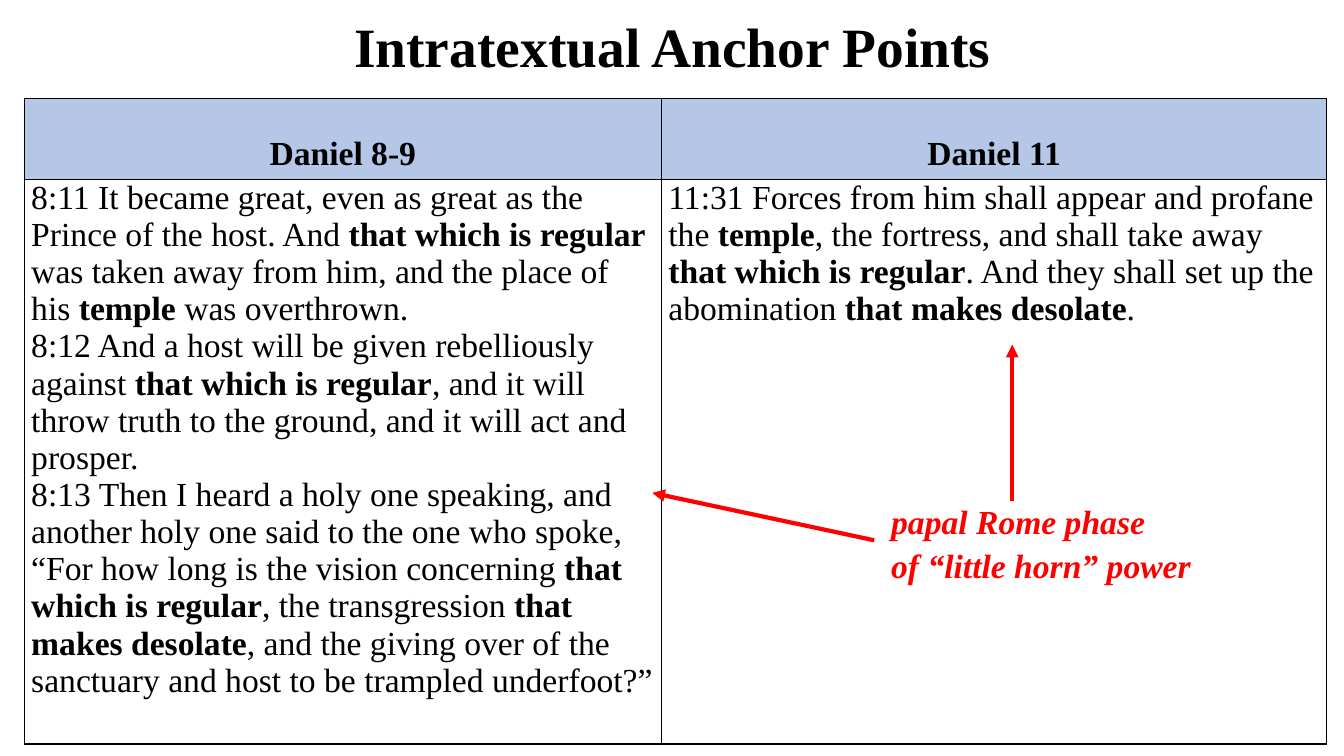
from dataclasses import dataclass

from lxml import etree
from pptx import Presentation
from pptx import util as u
from pptx.dml.color import RGBColor
from pptx.enum import shapes, text
from pptx.oxml import ns


@dataclass(frozen=True)
class Theme:
    """Colours, font and type sizes of the slide."""
    font: str = "Times New Roman"
    ink: str = "000000"
    accent: str = "FF0000"
    header: str = "B4C7E7"
    title_size: float = 39.6
    body_size: float = 24
    border: float = 1
    arrow: float = 3


THEME = Theme()
HEADINGS = ["Daniel 8-9", "Daniel 11"]
BOLD_MARK = "*"
VERSES = [
    [
        "8:11 It became great, even as great as the Prince of the host. And *that which is regular *"
        "was taken away from him, and the place of his *temple* was overthrown.",
        "8:12 And a host will be given rebelliously against *that which is regular*, and it will "
        "throw truth to the ground, and it will act and prosper.",
        "8:13 Then I heard a holy one speaking, and another holy one said to the one who spoke, "
        "“For how long is the vision concerning *that which is regular*, the transgression "
        "*that makes desolate*, and the giving over of the sanctuary and host to be trampled "
        "underfoot?”",
    ],
    [
        "11:31 Forces from him shall appear and profane the *temple*, the fortress, and shall take "
        "away *that which is regular*. And they shall set up the abomination *that makes desolate*.",
    ],
]


def style(paragraph, size, colour, bold=None, italic=None):
    """Set the font of a paragraph."""
    font = paragraph.font
    font.name, font.size = THEME.font, u.Pt(size)
    font.bold, font.italic = bold, italic
    font.color.rgb = RGBColor.from_string(colour)


def write_paragraphs(frame, lines, **font):
    """Write one styled paragraph per line, with marked phrases in bold."""
    for index, line in enumerate(lines):
        paragraph = frame.add_paragraph() if index else frame.paragraphs[0]
        style(paragraph, **font)
        for position, phrase in enumerate(line.split(BOLD_MARK)):
            if phrase:
                run = paragraph.add_run()
                run.text = phrase
                if position % 2:
                    run.font.bold = True


def add_text(slide, box, lines, **font):
    """Add a wrapping text box and return its frame."""
    frame = slide.shapes.add_textbox(*map(u.Inches, box)).text_frame
    frame.word_wrap = True
    write_paragraphs(frame, lines, **font)
    return frame


def add_title(slide, box):
    """Add the centred slide title."""
    frame = add_text(slide, box, ["Intratextual Anchor Points"],
                     size=THEME.title_size, colour=THEME.ink, bold=True)
    frame.vertical_anchor = text.MSO_ANCHOR.MIDDLE
    frame.paragraphs[0].alignment = text.PP_ALIGN.CENTER
    frame.paragraphs[0].line_spacing = 0.9


def set_borders(cell):
    """Draw a thin line on all four sides of a cell."""
    properties = cell._tc.get_or_add_tcPr()
    for index, side in enumerate(("lnL", "lnR", "lnT", "lnB")):
        line = etree.Element(ns.qn(f"a:{side}"), w=str(u.Pt(THEME.border)))
        fill = etree.SubElement(line, ns.qn("a:solidFill"))
        etree.SubElement(fill, ns.qn("a:srgbClr"), val=THEME.ink)
        properties.insert(index, line)


def format_cell(cell, fill=None):
    """Set the margins, fill and borders of a cell."""
    cell.margin_left = cell.margin_right = u.Inches(0.07)
    cell.margin_top = cell.margin_bottom = 0
    if fill:
        cell.fill.solid()
        cell.fill.fore_color.rgb = RGBColor.from_string(fill)
    else:
        cell.fill.background()
    set_borders(cell)


def add_verse_table(slide, box, widths, heights):
    """Add the table that sets the two passages side by side."""
    table = slide.shapes.add_table(2, 2, *map(u.Inches, box)).table
    table.horz_banding = table.first_row = False
    for column, width in zip(table.columns, widths):
        column.width = u.Inches(width)
    for row, height in zip(table.rows, heights):
        row.height = u.Inches(height)
    for index, (heading, verses) in enumerate(zip(HEADINGS, VERSES)):
        header, body = table.cell(0, index), table.cell(1, index)
        format_cell(header, THEME.header)
        format_cell(body)
        write_paragraphs(header.text_frame, [heading],
                         size=THEME.body_size, colour=THEME.ink, bold=True)
        header.text_frame.paragraphs[0].alignment = text.PP_ALIGN.CENTER
        header.text_frame.paragraphs[0].line_spacing = 2.0
        write_paragraphs(body.text_frame, verses,
                         size=THEME.body_size, colour=THEME.ink, bold=False)


def add_arrow(slide, start, end):
    """Add a straight arrow that points at its end."""
    arrow = slide.shapes.add_connector(shapes.MSO_CONNECTOR.STRAIGHT,
                                       *map(u.Inches, (*start, *end)))
    arrow.line.width = u.Pt(THEME.arrow)
    arrow.line.color.rgb = RGBColor.from_string(THEME.accent)
    etree.SubElement(arrow.line._get_or_add_ln(), ns.qn("a:tailEnd"), type="triangle")
    etree.SubElement(arrow._element.spPr, ns.qn("a:effectLst"))


def add_callout(slide, box):
    """Add the note and its arrows to both passages."""
    left, top, _, _ = box
    frame = add_text(slide, box, ["papal Rome phase", "of “little horn” power"],
                     size=THEME.body_size, colour=THEME.accent, bold=True, italic=True)
    for paragraph in frame.paragraphs:
        paragraph.line_spacing = 1.08
    add_arrow(slide, (left + 1.3, top + 0.08), (left + 1.3, top - 1.47))
    add_arrow(slide, (left - 0.07, top + 0.47), (left - 2.27, top))


def main():
    """Build and save the slide."""
    presentation = Presentation()
    presentation.slide_width = u.Inches(13.33)
    presentation.slide_height = u.Inches(7.5)
    slide = presentation.slides.add_slide(presentation.slide_layouts[6])
    add_title(slide, (0.92, 0.11, 11.5, 0.76))
    add_verse_table(slide, (0.24, 0.98, 12.92, 6.14), (6.32, 6.6), (0.74, 5.4))
    add_callout(slide, (8.74, 4.89, 3.28, 0.91))
    presentation.save("out.pptx")


if __name__ == "__main__":
    main()
